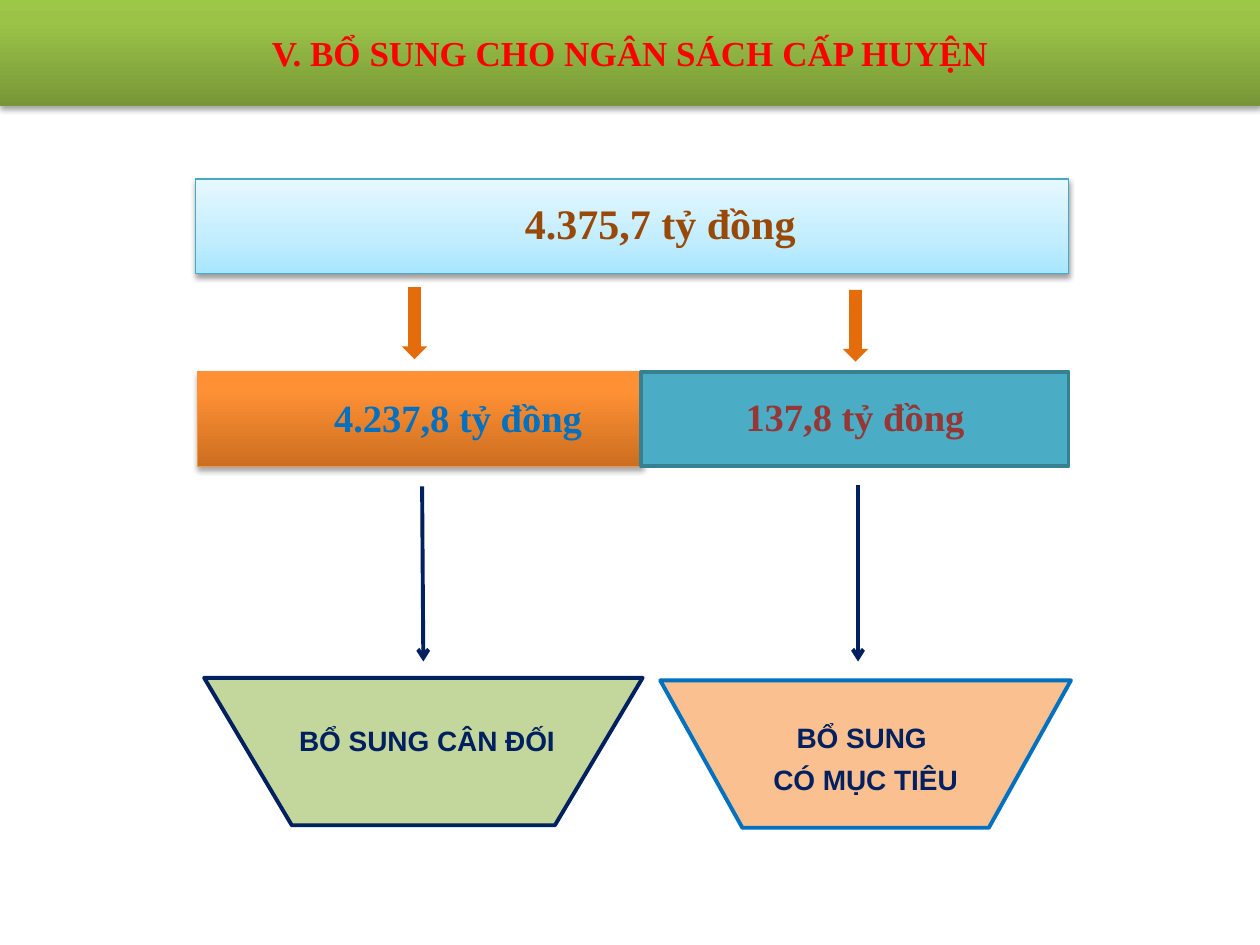
from copy import deepcopy

from lxml import etree
from pptx import Presentation
from pptx import util as u
from pptx.dml import color
from pptx.enum import shapes, text
from pptx.oxml import ns

KIND = shapes.MSO_SHAPE
SERIF, SANS = "Times New Roman", "Arial"
NAVY, AMBER = "002060", "E46C0A"


def rgb(code):
    return color.RGBColor.from_string(code)


def write(frame, words, size=16, font=SANS, ink=NAVY, space=None, inset=None):
    """Fill a text frame with centred bold text, one paragraph a line."""
    frame.word_wrap = True
    if inset is not None:
        frame.margin_left = frame.margin_right = u.Inches(inset)
        frame.margin_top = frame.margin_bottom = u.Inches(inset)
    for i, line in enumerate(words.split("\n")):
        para = frame.add_paragraph() if i else frame.paragraphs[0]
        para.alignment = text.PP_ALIGN.CENTER
        if space:
            para.line_spacing = u.Pt(space)
        run = para.add_run()
        run.text = line
        run.font.size, run.font.name, run.font.bold = u.Pt(size), font, True
        run.font.color.rgb = rgb(ink)


class Board:
    """The current slide and its drawing style."""

    def __init__(self, slide):
        self.slide = slide
        self.items = slide.shapes

    def blend(self, shape, stops):
        """Gradient that runs from the bottom edge to the top."""
        shape.fill.gradient()
        shape.fill.gradient_angle = 90
        marks = shape._element.spPr.find(".//" + ns.qn("a:gsLst"))
        while len(marks) < len(stops):
            marks.append(deepcopy(marks[-1]))
        for mark, (pos, code) in zip(shape.fill.gradient_stops, stops):
            mark.position = pos
            mark.color.rgb = rgb(code)

    def shade(self, shape, alpha, dist):
        """Soft black shadow below the shape."""
        shape.shadow.inherit = False
        fx = shape._element.spPr.find(ns.qn("a:effectLst"))
        drop = etree.SubElement(
            fx, ns.qn("a:outerShdw"), blurRad=str(u.Pt(3.1)),
            dist=str(u.Pt(dist)), dir="5400000", rotWithShape="0")
        tint = etree.SubElement(drop, ns.qn("a:srgbClr"), val="000000")
        etree.SubElement(tint, ns.qn("a:alpha"), val=str(alpha * 1000))

    def title(self, words, box, stops, **style):
        head = self.items.title
        head.left, head.top, head.width, head.height = map(u.Inches, box)
        self.blend(head, stops)
        self.shade(head, 35, 1.8)
        head.text_frame.vertical_anchor = text.MSO_ANCHOR.MIDDLE
        write(head.text_frame, words, **style)

    def shape(self, kind, box, fill, line=None, width=2.25, shadow=None):
        item = self.items.add_shape(kind, *map(u.Inches, box))
        item.shadow.inherit = False
        if isinstance(fill, str):
            item.fill.solid()
            item.fill.fore_color.rgb = rgb(fill)
        else:
            self.blend(item, fill)
        if line:
            item.line.color.rgb = rgb(line)
            item.line.width = u.Pt(width)
        else:
            item.line.fill.background()
        if shadow:
            self.shade(item, *shadow)

    def label(self, words, box, **style):
        item = self.items.add_textbox(*map(u.Inches, box))
        write(item.text_frame, words, **style)
        item.text_frame.auto_size = text.MSO_AUTO_SIZE.SHAPE_TO_FIT_TEXT

    def arrow(self, start, end):
        line = self.items.add_connector(
            shapes.MSO_CONNECTOR.STRAIGHT, *map(u.Inches, start + end))
        line.line.color.rgb = rgb(NAVY)
        line.line.width = u.Pt(2.25)
        etree.SubElement(line.line._get_or_add_ln(), ns.qn("a:tailEnd"), type="arrow")
        etree.SubElement(line._element.spPr, ns.qn("a:effectLst"))


def main():
    deck = Presentation()
    deck.slide_width, deck.slide_height = u.Inches(10), u.Inches(7.5)
    board = Board(deck.slides.add_slide(deck.slide_layouts[5]))

    # Title band
    board.title("V. BỔ SUNG CHO NGÂN SÁCH CẤP HUYỆN", (0, 0, 10, 0.84),
                [(0, "779737"), (0.8, "9BC348"), (1, "9DC746")],
                size=20, font=SERIF, ink="FF0000", inset=0)

    # Total
    board.shape(KIND.RECTANGLE, (1.55, 1.42, 6.93, 0.75),
                [(0, "A7E6FF"), (0.35, "C1EDFF"), (1, "E7F8FF")],
                line="46AAC5", width=0.75, shadow=(38, 1.6))
    board.label("4.375,7 tỷ đồng", (3.08, 1.52, 4.32, 0.5),
                size=24, font=SERIF, ink="984807")

    # Split into two amounts
    board.shape(KIND.RECTANGLE, (1.57, 2.95, 3.53, 0.75),
                [(0, "CC6E20"), (0.8, "FF9034"), (1, "FF9136")],
                line="F69240", width=0.75, shadow=(35, 1.8))
    board.shape(KIND.RECTANGLE, (5.09, 2.95, 3.39, 0.75), "4BACC6", line="377F92")
    for words, box, ink in (
            ("4.237,8 tỷ đồng", (2.18, 3.08, 2.91, 0.47), "0070C0"),
            ("137,8 tỷ đồng", (5.09, 3.07, 3.39, 0.47), "953735")):
        board.label(words, box, size=22, font=SERIF, ink=ink)

    # Block arrows from the total to the amounts
    for left, top in ((3.19, 2.28), (6.69, 2.3)):
        board.shape(KIND.DOWN_ARROW, (left, top, 0.2, 0.57), AMBER)

    # Kinds of supplement
    for box, fill, line, words, area in (
            ((1.62, 5.38, 3.48, 1.17), "C3D69B", NAVY,
             "BỔ SUNG CÂN ĐỐI", (2.21, 5.63, 2.36, 0.44)),
            ((5.24, 5.4, 3.26, 1.17), "FAC090", "0070C0",
             "BỔ SUNG \nCÓ MỤC TIÊU", (5.95, 5.6, 1.84, 0.77))):
        board.shape(KIND.FLOWCHART_MANUAL_OPERATION, box, fill, line=line)
        board.label(words, area, space=24)

    # Thin arrows from the amounts to the kinds
    board.arrow((3.35, 3.86), (3.36, 5.25))
    board.arrow((6.81, 3.85), (6.81, 5.25))

    deck.save("out.pptx")


if __name__ == "__main__":
    main()
